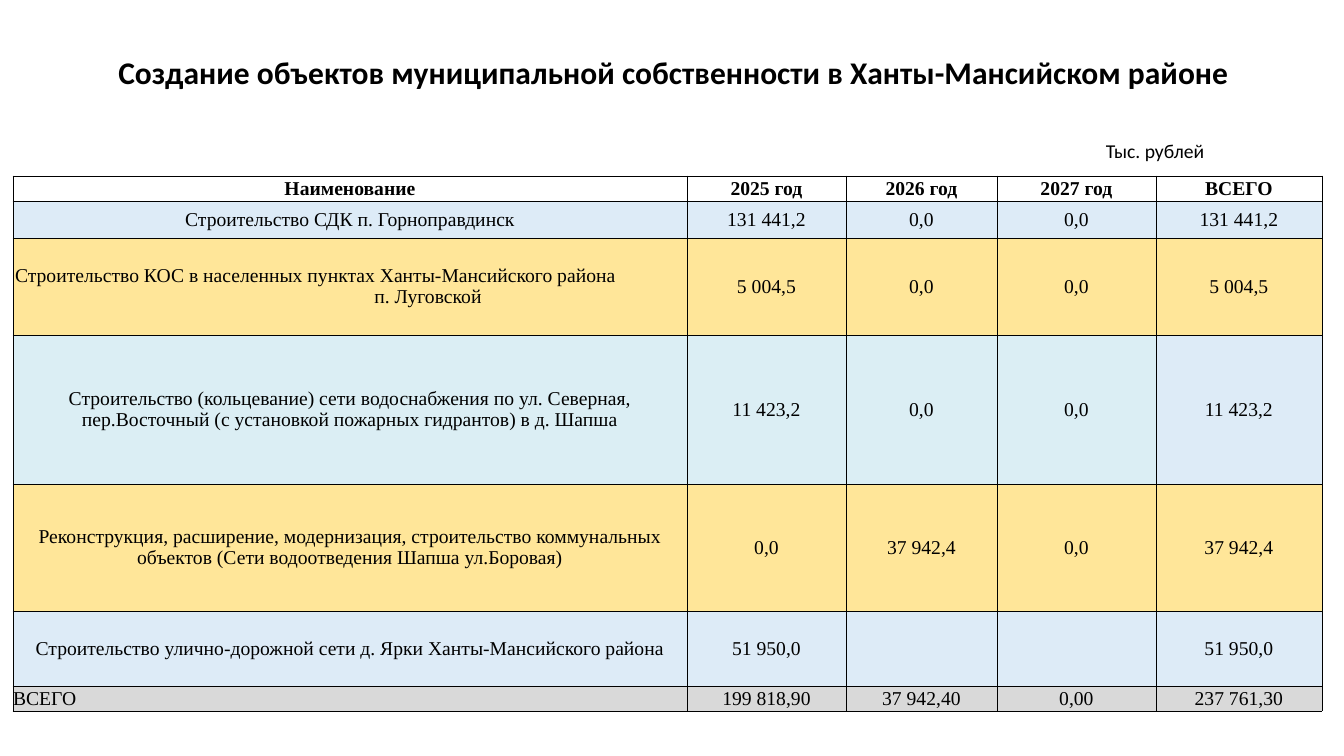
"""Build the slide on municipal construction in the Khanty-Mansiysk district."""
from dataclasses import dataclass

import lxml.etree
import pptx
import pptx.dml.color
import pptx.enum.text
import pptx.oxml.ns
import pptx.util

RGBColor = pptx.dml.color.RGBColor
Align = pptx.enum.text.PP_ALIGN
Anchor = pptx.enum.text.MSO_ANCHOR

BLACK = RGBColor(0x00, 0x00, 0x00)
WHITE = RGBColor(0xFF, 0xFF, 0xFF)
BLUE = RGBColor(0xDD, 0xEB, 0xF7)
YELLOW = RGBColor(0xFF, 0xE6, 0x99)
AQUA = RGBColor(0xDB, 0xEE, 0xF4)
GREY = RGBColor(0xD9, 0xD9, 0xD9)

PX_PER_INCH = 100.8
HEADING_FONT = "Calibri"
TABLE_FONT = "Times New Roman"
BORDER_POINTS = 0.5
COLUMN_WIDTHS = (674, 159, 151, 159, 166)


@dataclass(frozen=True)
class Line:
    text: str
    align: Align = Align.CENTER
    indent: int = 0


@dataclass(frozen=True)
class BudgetRow:
    height: int
    name: tuple[Line, ...]
    amounts: tuple[str, str, str, str]
    fill: RGBColor
    total_fill: RGBColor
    bold: bool = False


ROWS = (
    BudgetRow(25, (Line("Наименование"),),
              ("2025 год", "2026 год", "2027 год", "ВСЕГО"), WHITE, WHITE, bold=True),
    BudgetRow(37, (Line("Строительство СДК п. Горноправдинск"),),
              ("131 441,2", "0,0", "0,0", "131 441,2"), BLUE, BLUE),
    BudgetRow(97, (Line("Строительство КОС в населенных пунктах Ханты-Мансийского района",
                        Align.LEFT, 2),
                   Line("п. Луговской", indent=156)),
              ("5 004,5", "0,0", "0,0", "5 004,5"), YELLOW, YELLOW),
    BudgetRow(149, (Line("Строительство (кольцевание) сети водоснабжения по ул. Северная, "
                         "пер.Восточный (с установкой пожарных гидрантов) в д. Шапша"),),
              ("11 423,2", "0,0", "0,0", "11 423,2"), AQUA, BLUE),
    BudgetRow(127, (Line("Реконструкция, расширение, модернизация, строительство коммунальных "
                         "объектов (Сети водоотведения Шапша ул.Боровая)"),),
              ("0,0", "37 942,4", "0,0", "37 942,4"), YELLOW, YELLOW),
    BudgetRow(75, (Line("Строительство улично-дорожной сети д. Ярки Ханты-Мансийского района"),),
              ("51 950,0", "", "", "51 950,0"), BLUE, BLUE),
    BudgetRow(25, (Line("ВСЕГО", Align.LEFT),),
              ("199 818,90", "37 942,40", "0,00", "237 761,30"), GREY, GREY),
)


def px(length: int) -> pptx.util.Emu:
    return pptx.util.Emu(round(length * pptx.util.Inches(1) / PX_PER_INCH))


def style_paragraph(paragraph, line: Line, font: str, size: float, bold: bool = False) -> None:
    paragraph.text = line.text
    paragraph.alignment = line.align
    paragraph.font.name = font
    paragraph.font.size = pptx.util.Pt(size)
    paragraph.font.bold = bold
    paragraph.font.color.rgb = BLACK
    if line.indent:
        paragraph._p.get_or_add_pPr().set("marL", str(px(line.indent)))


def add_borders(cell) -> None:
    qn = pptx.oxml.ns.qn
    properties = cell._tc.get_or_add_tcPr()
    for side in ("a:lnL", "a:lnR", "a:lnT", "a:lnB"):
        border = lxml.etree.SubElement(properties, qn(side),
                                       w=str(pptx.util.Pt(BORDER_POINTS)))
        solid = lxml.etree.SubElement(border, qn("a:solidFill"))
        lxml.etree.SubElement(solid, qn("a:srgbClr"), val=str(BLACK))


def fill_cell(cell, lines: tuple[Line, ...], fill: RGBColor, bold: bool) -> None:
    cell.margin_left = cell.margin_right = cell.margin_top = cell.margin_bottom = 0
    cell.vertical_anchor = Anchor.MIDDLE
    add_borders(cell)
    cell.fill.solid()
    cell.fill.fore_color.rgb = fill
    frame = cell.text_frame
    for index, line in enumerate(lines):
        paragraph = frame.add_paragraph() if index else frame.paragraphs[0]
        style_paragraph(paragraph, line, TABLE_FONT, 14, bold)


def add_title(page) -> None:
    title = page.shapes.title
    title.left, title.top, title.width, title.height = map(px, (69, 36, 1210, 72))
    frame = title.text_frame
    frame.auto_size = pptx.enum.text.MSO_AUTO_SIZE.NONE
    frame.vertical_anchor = Anchor.MIDDLE
    heading = Line("Создание объектов муниципальной собственности в Ханты-Мансийском районе")
    style_paragraph(frame.paragraphs[0], heading, HEADING_FONT, 22.5, bold=True)


def add_unit_label(page) -> None:
    box = page.shapes.add_textbox(*map(px, (1096, 134, 169, 34)))
    box.text_frame.word_wrap = True
    style_paragraph(box.text_frame.paragraphs[0], Line("Тыс. рублей", Align.LEFT),
                    HEADING_FONT, 14)


def add_budget_table(page) -> None:
    height = sum(row.height for row in ROWS)
    table = page.shapes.add_table(len(ROWS), len(COLUMN_WIDTHS), px(13), px(176),
                                  px(sum(COLUMN_WIDTHS)), px(height)).table
    table.first_row = table.horz_banding = False
    for column, width in zip(table.columns, COLUMN_WIDTHS):
        column.width = px(width)
    for table_row, row in zip(table.rows, ROWS):
        table_row.height = px(row.height)
        contents = (row.name, *((Line(amount),) for amount in row.amounts))
        fills = (row.fill,) * len(row.amounts) + (row.total_fill,)
        for cell, lines, fill in zip(table_row.cells, contents, fills):
            fill_cell(cell, lines, fill, row.bold)


def main() -> None:
    deck = pptx.Presentation()
    deck.slide_width, deck.slide_height = px(1344), px(756)
    page = deck.slides.add_slide(deck.slide_layouts.get_by_name("Title Only"))
    add_title(page)
    add_unit_label(page)
    add_budget_table(page)
    deck.save("out.pptx")


if __name__ == "__main__":
    main()
